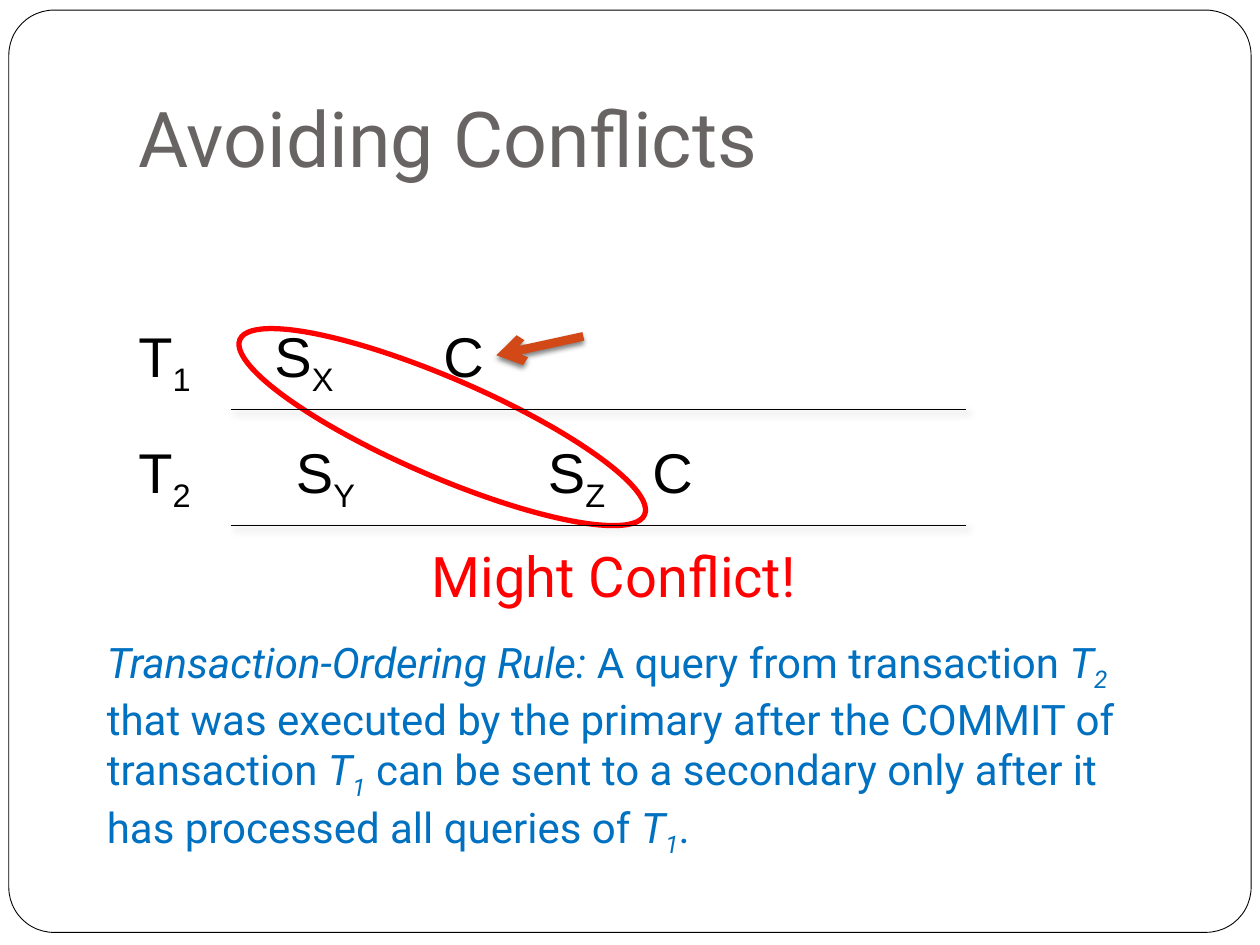
from lxml import etree
from pptx import Presentation
from pptx.dml.color import RGBColor
from pptx.enum.shapes import MSO_CONNECTOR, MSO_SHAPE
from pptx.enum.text import MSO_ANCHOR, MSO_AUTO_SIZE, PP_ALIGN
from pptx.oxml import parse_xml
from pptx.oxml.ns import nsdecls, qn
from pptx.util import Inches, Pt

STRAIGHT = MSO_CONNECTOR.STRAIGHT
OVAL, ROUNDED = MSO_SHAPE.OVAL, MSO_SHAPE.ROUNDED_RECTANGLE
BOTTOM, LEFT = MSO_ANCHOR.BOTTOM, PP_ALIGN.LEFT
FIT_SHAPE = MSO_AUTO_SIZE.SHAPE_TO_FIT_TEXT

WHITE = RGBColor(0xFF, 0xFF, 0xFF)
BLACK = RGBColor(0, 0, 0)
GREY = RGBColor(0x69, 0x64, 0x64)
RED = RGBColor(0xFF, 0, 0)
ORANGE = RGBColor(0xD3, 0x48, 0x17)
BLUE = RGBColor(0, 0x70, 0xC0)

# Content: runs are (text, style), where "i" is italic and "s" is subscript
TITLE = "Avoiding Conflicts"
WARNING = [("Might Conflict!", "")]
RULE = [
    ("Transaction-Ordering Rule: ", "i"),
    ("A query from transaction ", ""), ("T", "i"), ("2", "is"),
    (" that was executed by the primary after the COMMIT of transaction ", ""),
    ("T", "i"), ("1", "is"),
    (" can be sent to a secondary only after it has processed all queries of ", ""),
    ("T", "i"), ("1", "is"), (".", ""),
]
# Each timeline holds (left, width, letter, subscript)
TIMELINES = [
    [(1, 0.64, "T", "1"), (2.08, 0.7, "S", "X"), (3.42, 0.53, "C", "")],
    [(1, 0.64, "T", "2"), (2.25, 0.7, "S", "Y"), (4.25, 0.68, "S", "Z"),
     (5.08, 0.53, "C", "")],
]
TIMELINE_TOP, TIMELINE_PITCH, LABEL_HEIGHT = 2.5, 0.92, 0.64
AXIS_LEFT, AXIS_RIGHT, AXIS_DROP = 1.83, 7.67, 0.75


def add_text(slide, box, runs, font_name, size, color, wrap=False):
    shape = slide.shapes.add_textbox(*map(Inches, box))
    frame = shape.text_frame
    frame.word_wrap = wrap
    frame.auto_size = FIT_SHAPE
    paragraph = frame.paragraphs[0]
    font = paragraph.font
    font.name, font.size, font.color.rgb = font_name, Pt(size), color
    for text, style in runs:
        run = paragraph.add_run()
        run.text = text
        if "i" in style:
            run.font.italic = True
        if "s" in style:
            run.font._element.set("baseline", "-25000")


def add_line(slide, start, end, color, width, shadow):
    """Draw a line; shadow is (opacity %, blur pt, distance pt, angle)."""
    line = slide.shapes.add_connector(STRAIGHT, *map(Inches, start + end))
    line.line.color.rgb = color
    line.line.width = Pt(width)
    opacity, blur, distance, angle = shadow
    line._element.spPr.append(parse_xml(
        f'<a:effectLst {nsdecls("a")}><a:outerShdw blurRad="{Pt(blur)}" '
        f'dist="{Pt(distance)}" dir="{angle * 60000}" rotWithShape="0">'
        f'<a:srgbClr val="000000"><a:alpha val="{opacity * 1000}"/></a:srgbClr>'
        '</a:outerShdw></a:effectLst>'))
    return line


def add_outline(slide, kind, box, color, width):
    shape = slide.shapes.add_shape(kind, *map(Inches, box))
    shape.shadow.inherit = False
    shape.fill.background()
    shape.line.color.rgb = color
    shape.line.width = Pt(width)
    return shape


def main():
    presentation = Presentation()
    presentation.slide_width, presentation.slide_height = Inches(10), Inches(7.5)
    slide = presentation.slides.add_slide(presentation.slide_layouts[5])

    # Rounded page frame, behind the title
    page = add_outline(slide, ROUNDED, (0.07, 0.08, 9.86, 7.32), BLACK, 0.5)
    page.adjustments[0] = 0.049
    page.fill.solid()
    page.fill.fore_color.rgb = WHITE
    title = slide.shapes.title
    title._element.addprevious(page._element)

    # Title
    title.left, title.top, title.width, title.height = map(
        Inches, (1, 0.3, 8.5, 1.25))
    frame = title.text_frame
    frame.text = TITLE
    frame.vertical_anchor = BOTTOM
    frame.margin_bottom = Inches(0.1)
    paragraph = frame.paragraphs[0]
    paragraph.alignment = LEFT
    font = paragraph.font
    font.name, font.size, font.color.rgb = "Roboto", Pt(44), GREY

    # Conflict marker and its caption
    marker = add_outline(slide, OVAL, (3.12, 1.64, 0.78, 3.5), RED, 3)
    marker.rotation = 293.4
    add_text(slide, (3.33, 4.25, 3.18, 0.64), WARNING, "Roboto", 32, RED)

    # Arrow to the first commit
    arrow = add_line(slide, (4.63, 2.67), (3.94, 2.82), ORANGE, 5, (50, 3, 2, 90))
    etree.SubElement(arrow.line._get_or_add_ln(), qn("a:tailEnd"), type="arrow")

    # Ordering rule
    add_text(slide, (0.75, 5, 8.67, 1.72), RULE, "Roboto", 24, BLUE, wrap=True)

    # Timelines
    for row, labels in enumerate(TIMELINES):
        top = TIMELINE_TOP + row * TIMELINE_PITCH
        axis = top + AXIS_DROP
        add_line(slide, (AXIS_LEFT, axis), (AXIS_RIGHT, axis), BLACK, 0.75,
                 (40, 4, 3, 45))
        for left, width, letter, subscript in labels:
            runs = [(letter, "")] + ([(subscript, "s")] if subscript else [])
            add_text(slide, (left, top, width, LABEL_HEIGHT), runs, "Arial", 32, BLACK)

    presentation.save("out.pptx")


if __name__ == "__main__":
    main()
